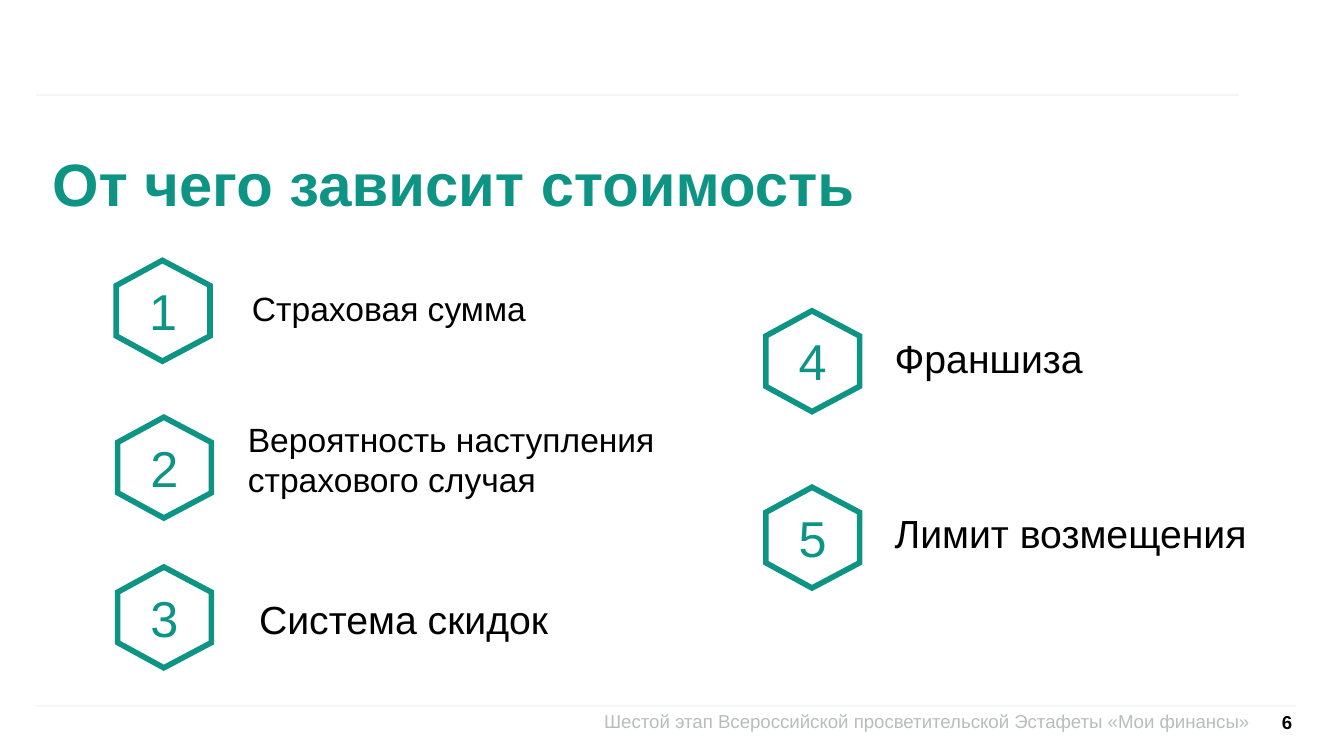
from lxml.etree import SubElement
from pptx import Presentation
from pptx.dml.color import RGBColor
from pptx.enum.shapes import MSO_CONNECTOR
from pptx.enum.text import MSO_ANCHOR, PP_ALIGN
from pptx.oxml.ns import qn
from pptx.util import Pt

PX = 9525
FONT = "Arial"
COLORS = {
    "teal": "0D9485",
    "text": "000000",
    "muted": "B9BCBF",
    "rule": "F5F5F5",
}
HEX_WIDTH, HEX_HEIGHT, HEX_SHOULDER = 67, 72, 18

FACTORS = [
    ("1", "Страховая сумма", (83, 186), (87, 15, 253, 38), 18),
    ("2", "Вероятность наступления страхового случая", (84, 298), (83, -4, 361, 68), 18),
    ("3", "Система скидок", (84, 405), (91, 15, 255, 43), 21),
    ("4", "Франшиза", (547, 222), (82, 12, 307, 43), 21),
    ("5", "Лимит возмещения", (547, 348), (82, 11, 307, 43), 21),
]


def color(name):
    return RGBColor.from_string(COLORS[name])


def emu(*lengths):
    return [length * PX for length in lengths]


def format_text(shape, text, size, ink, align=PP_ALIGN.LEFT, bold=False, insets=(10, 5, 10, 5)):
    frame = shape.text_frame
    frame.text = text
    frame.word_wrap = True
    frame.vertical_anchor = MSO_ANCHOR.TOP
    frame.margin_left, frame.margin_top, frame.margin_right, frame.margin_bottom = emu(*insets)
    paragraph = frame.paragraphs[0]
    paragraph.alignment = align
    font = paragraph.runs[0].font
    font.name, font.size, font.bold = FONT, Pt(size), bold
    font.color.rgb = color(ink)


def add_text(slide, box, text, size, ink, **options):
    shape = slide.shapes.add_textbox(*emu(*box))
    format_text(shape, text, size, ink, **options)
    return shape


def add_rule(slide, left, top, width):
    rule = slide.shapes.add_connector(
        MSO_CONNECTOR.STRAIGHT, *emu(left, top, left + width, top))
    rule.line.color.rgb = color("rule")
    rule.line.width = Pt(1)
    SubElement(rule._element.spPr, qn("a:effectLst"))


def add_title(slide, left, top, width, height):
    title = slide.shapes.title
    title.left, title.top, title.width, title.height = emu(left, top, width, height)
    format_text(title, "От чего зависит стоимость", 32, "teal",
                align=PP_ALIGN.CENTER, bold=True)


def add_hexagon(slide, left, top):
    right, bottom = left + HEX_WIDTH, top + HEX_HEIGHT
    middle = left + HEX_WIDTH // 2
    upper, lower = top + HEX_SHOULDER, bottom - HEX_SHOULDER
    outline = slide.shapes.build_freeform(middle, top, scale=PX)
    outline.add_line_segments(
        [(right, upper), (right, lower), (middle, bottom), (left, lower), (left, upper)],
        close=True)
    hexagon = outline.convert_to_shape()
    hexagon.shadow.inherit = False
    hexagon.fill.background()
    hexagon.line.color.rgb = color("teal")
    hexagon.line.width = Pt(3)
    SubElement(hexagon._element.spPr.find(qn("a:ln")), qn("a:miter"), lim="800000")


def add_factor(slide, left, top, number, label, label_box, label_size):
    add_hexagon(slide, left, top)
    add_text(slide, (left + 8, top + 9, 51, 54), number, 27, "teal",
             align=PP_ALIGN.CENTER)
    dx, dy, width, height = label_box
    add_text(slide, (left + dx, top + dy, width, height), label, label_size, "text")


def add_footer(slide, left, top, width):
    add_rule(slide, left, top, width)
    right = left + width
    add_text(slide, (right - 582, top + 3, 548, 34),
             "Шестой этап Всероссийской просветительской Эстафеты «Мои финансы»",
             10, "muted", align=PP_ALIGN.RIGHT, insets=(0, 0, 0, 0))
    page = add_text(slide, (right - 19, top - 2, 18, 27), "6", 10, "text",
                    align=PP_ALIGN.RIGHT, bold=True, insets=(0, 0, 2, 0))
    page.text_frame.vertical_anchor = MSO_ANCHOR.MIDDLE


def main():
    deck = Presentation()
    deck.slide_width, deck.slide_height = emu(960, 540)
    slide = deck.slides.add_slide(deck.slide_layouts[5])
    add_rule(slide, 26, 68, 859)
    add_title(slide, -86, 100, 820, 61)
    for number, label, (left, top), label_box, label_size in FACTORS:
        add_factor(slide, left, top, number, label, label_box, label_size)
    add_footer(slide, 26, 504, 900)
    deck.save("out.pptx")


if __name__ == "__main__":
    main()
